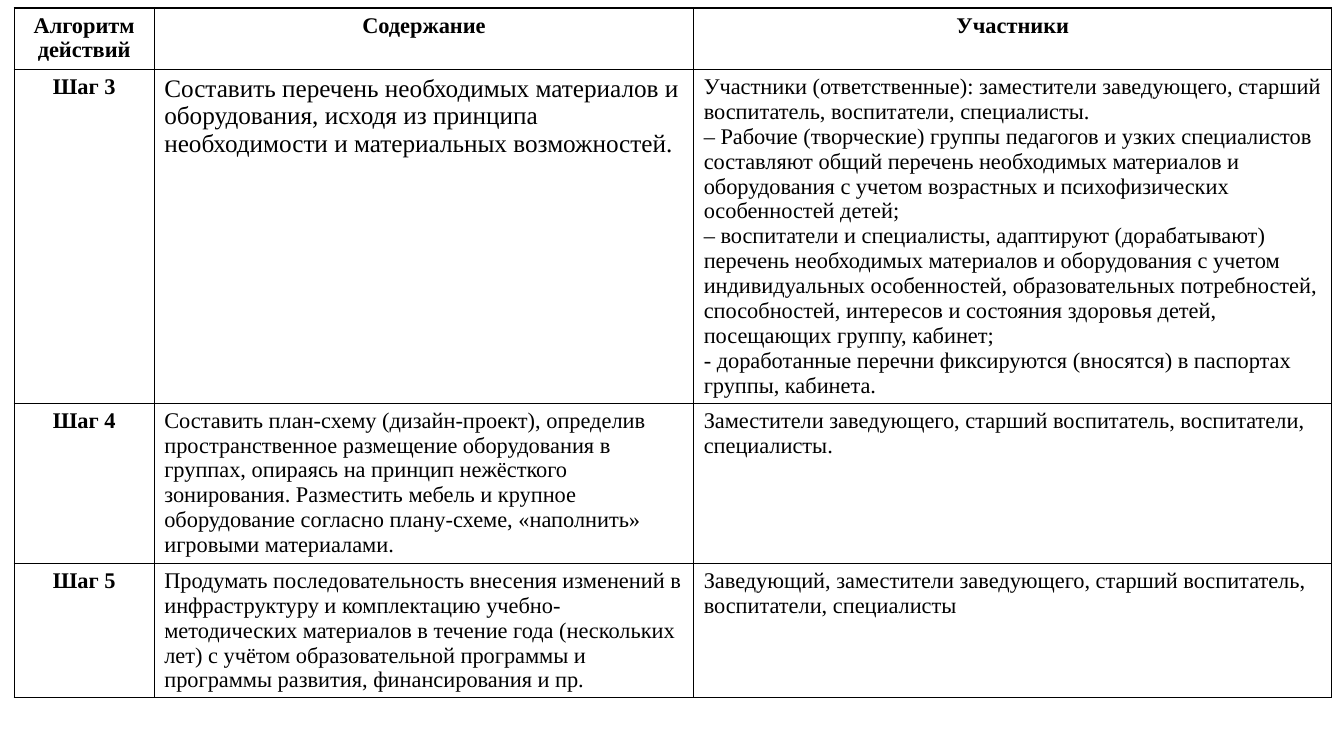
from lxml import etree
from pptx import Presentation
from pptx.dml.color import RGBColor
from pptx.enum.text import PP_ALIGN
from pptx.oxml.ns import qn
from pptx.util import Inches, Pt

CENTER = PP_ALIGN.CENTER
LEFT = PP_ALIGN.LEFT

COLORS = {"text": "000000", "border": "000000", "cell": "FFFFFF"}
BODY = {"name": "Times New Roman", "size": Pt(16), "bold": False}
LARGE = {**BODY, "size": Pt(18)}
HEADING = {**BODY, "bold": True}

SLIDE_WIDTH, SLIDE_HEIGHT = 13.33, 7.5
TABLE_LEFT, TABLE_TOP = 0.14, 0.08
COLUMN_WIDTHS = [1.39, 5.35, 6.33]
ROW_HEIGHTS = [0.61, 3.3, 1.59, 1.33]
BORDER_WIDTH = Pt(1)

HEADERS = ["Алгоритм действий", "Содержание", "Участники"]
STEPS = [
    (
        "Шаг 3",
        "Составить перечень необходимых материалов и оборудования, исходя из "
        "принципа необходимости и материальных возможностей.",
        LARGE,
        [
            "Участники (ответственные): заместители заведующего, старший "
            "воспитатель, воспитатели, специалисты.",
            "– Рабочие (творческие) группы педагогов и узких специалистов "
            "составляют общий перечень необходимых материалов и оборудования с "
            "учетом возрастных и психофизических особенностей детей;",
            "– воспитатели и специалисты, адаптируют (дорабатывают) перечень "
            "необходимых материалов и оборудования с учетом индивидуальных "
            "особенностей, образовательных потребностей, способностей, интересов "
            "и состояния здоровья детей, посещающих группу, кабинет;",
            "- доработанные перечни фиксируются (вносятся) в паспортах группы, "
            "кабинета.",
        ],
    ),
    (
        "Шаг 4",
        "Составить план-схему (дизайн-проект), определив пространственное "
        "размещение оборудования в группах, опираясь на принцип нежёсткого "
        "зонирования. Разместить мебель и крупное оборудование согласно "
        "плану-схеме, «наполнить» игровыми материалами.",
        BODY,
        ["Заместители заведующего, старший воспитатель, воспитатели, специалисты."],
    ),
    (
        "Шаг 5",
        "Продумать последовательность внесения изменений в инфраструктуру и "
        "комплектацию учебно-методических материалов в течение года (нескольких "
        "лет) с учётом образовательной программы и программы развития, "
        "финансирования и пр.",
        BODY,
        ["Заведующий, заместители заведующего, старший воспитатель, "
         "воспитатели, специалисты"],
    ),
]


def add_borders(cell):
    properties = cell._tc.get_or_add_tcPr()
    for side in ("a:lnL", "a:lnR", "a:lnT", "a:lnB"):
        line = etree.SubElement(properties, qn(side), w=str(BORDER_WIDTH))
        fill = etree.SubElement(line, qn("a:solidFill"))
        etree.SubElement(fill, qn("a:srgbClr"), val=COLORS["border"])


def fill_cell(cell, texts, font_format, alignment):
    add_borders(cell)
    cell.fill.solid()
    cell.fill.fore_color.rgb = RGBColor.from_string(COLORS["cell"])
    frame = cell.text_frame
    for index, text in enumerate(texts):
        paragraph = frame.add_paragraph() if index else frame.paragraphs[0]
        paragraph.alignment = alignment
        run = paragraph.add_run()
        run.text = text
        for attribute, value in font_format.items():
            setattr(run.font, attribute, value)
        run.font.color.rgb = RGBColor.from_string(COLORS["text"])


def add_grid(slide):
    shape = slide.shapes.add_table(
        len(ROW_HEIGHTS), len(COLUMN_WIDTHS),
        Inches(TABLE_LEFT), Inches(TABLE_TOP),
        Inches(sum(COLUMN_WIDTHS)), Inches(sum(ROW_HEIGHTS)),
    )
    table = shape.table
    table.horz_banding = False
    table.first_row = False
    for column, width in zip(table.columns, COLUMN_WIDTHS):
        column.width = Inches(width)
    for row, height in zip(table.rows, ROW_HEIGHTS):
        row.height = Inches(height)
    return table


def main():
    presentation = Presentation()
    presentation.slide_width = Inches(SLIDE_WIDTH)
    presentation.slide_height = Inches(SLIDE_HEIGHT)
    slide = presentation.slides.add_slide(presentation.slide_layouts[6])
    table = add_grid(slide)
    for column, header in enumerate(HEADERS):
        fill_cell(table.cell(0, column), [header], HEADING, CENTER)
    for row, (step, content, content_format, participants) in enumerate(STEPS, 1):
        fill_cell(table.cell(row, 0), [step], HEADING, CENTER)
        fill_cell(table.cell(row, 1), [content], content_format, LEFT)
        fill_cell(table.cell(row, 2), participants, BODY, LEFT)
    presentation.save("out.pptx")


if __name__ == "__main__":
    main()
